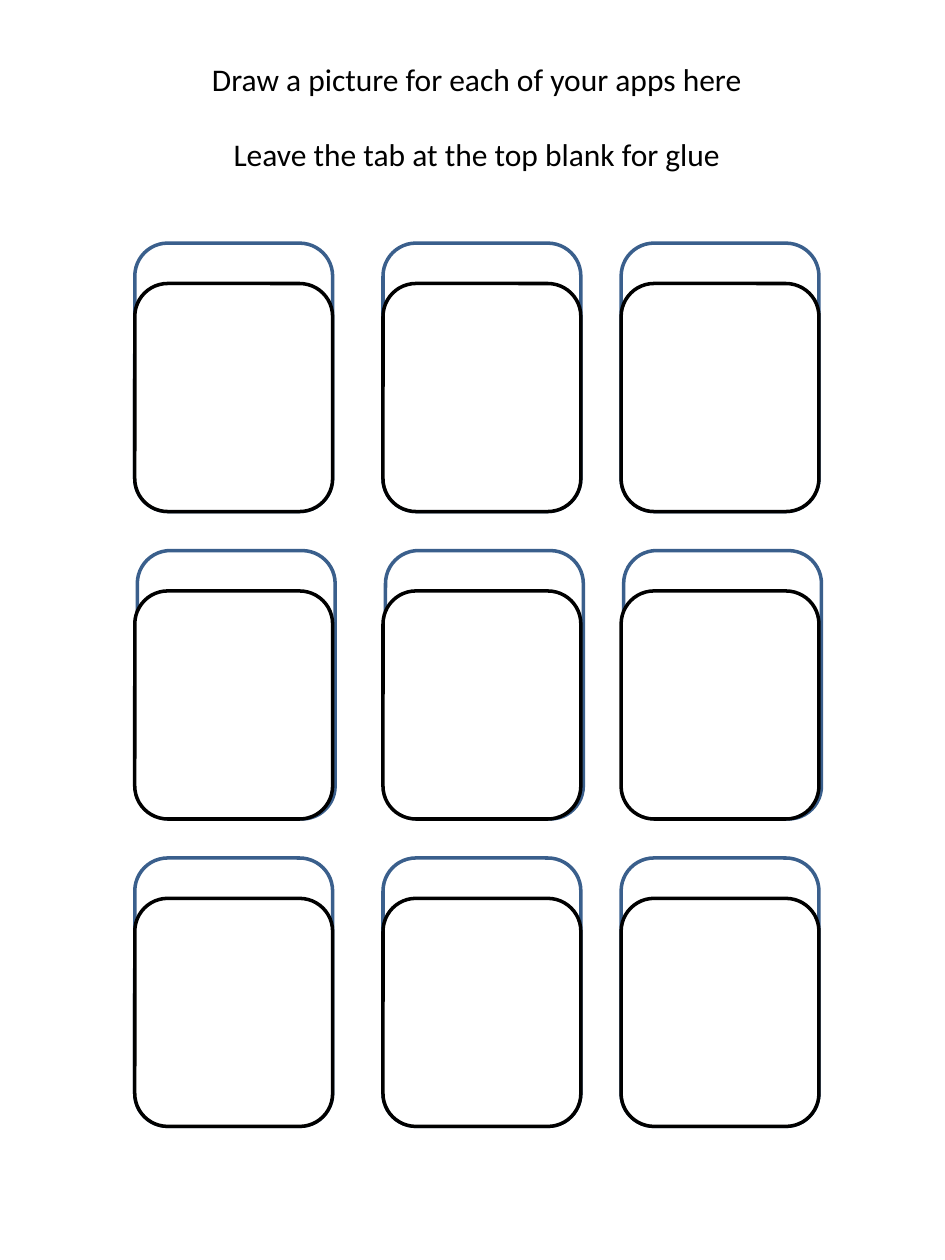
from dataclasses import dataclass

from pptx import Presentation
from pptx.dml.color import RGBColor
from pptx.enum import shapes, text
from pptx.util import Inches, Pt

COLORS = {"paper": "FFFFFF", "tab": "3A5F8C", "ink": "000000"}
FONT = "Calibri"
INSTRUCTIONS = (
    "Draw a picture for each of your apps here",
    "Leave the tab at the top blank for glue",
)

# Grid of cards, in inches
COLUMN_LEFTS = (1.07, 3.04, 4.93)
FIRST_ROW_TOP, ROW_PITCH, ROW_COUNT = 1.93, 2.44, 3
CARD_WIDTH, CARD_HEIGHT, TAB_HEIGHT = 1.57, 2.13, 0.32
MIDDLE_ROW_SHIFT = 0.02


@dataclass(frozen=True)
class Card:
    left: float
    top: float
    height: float
    outline: str


def color(name: str) -> RGBColor:
    return RGBColor.from_string(COLORS[name])


def draw_card(slide, card: Card) -> None:
    panel = slide.shapes.add_shape(
        shapes.MSO_SHAPE.ROUNDED_RECTANGLE,
        Inches(card.left), Inches(card.top), Inches(CARD_WIDTH), Inches(card.height),
    )
    panel.shadow.inherit = False
    panel.fill.solid()
    panel.fill.fore_color.rgb = color("paper")
    panel.line.color.rgb = color(card.outline)
    panel.line.width = Pt(2)


def write_instructions(slide) -> None:
    heading = slide.shapes.title
    heading.left, heading.top = Inches(1.07), Inches(0.43)
    heading.width, heading.height = Inches(5.43), Inches(1.01)
    frame = heading.text_frame
    frame.word_wrap = True
    frame.auto_size = text.MSO_AUTO_SIZE.NONE
    frame.vertical_anchor = text.MSO_ANCHOR.TOP
    for index, instruction in enumerate(INSTRUCTIONS):
        paragraph = frame.add_paragraph() if index else frame.paragraphs[0]
        paragraph.alignment = text.PP_ALIGN.CENTER
        if index:
            paragraph.space_before = Pt(21)
        run = paragraph.add_run()
        run.text = instruction
        run.font.name = FONT
        run.font.size = Pt(18)
        run.font.color.rgb = color("ink")


def main() -> None:
    deck = Presentation()
    deck.slide_width, deck.slide_height = Inches(7.5), Inches(10)
    slide = deck.slides.add_slide(deck.slide_layouts[5])  # title only

    # Heading
    write_instructions(slide)

    # Each glue tab shows above the drawing area that covers its card
    for row in range(ROW_COUNT):
        top = FIRST_ROW_TOP + row * ROW_PITCH
        shift = MIDDLE_ROW_SHIFT if row == 1 else 0
        for left in COLUMN_LEFTS:
            draw_card(slide, Card(left + shift, top, CARD_HEIGHT, "tab"))
            draw_card(slide, Card(left, top + TAB_HEIGHT, CARD_HEIGHT - TAB_HEIGHT, "ink"))

    deck.save("out.pptx")


if __name__ == "__main__":
    main()
